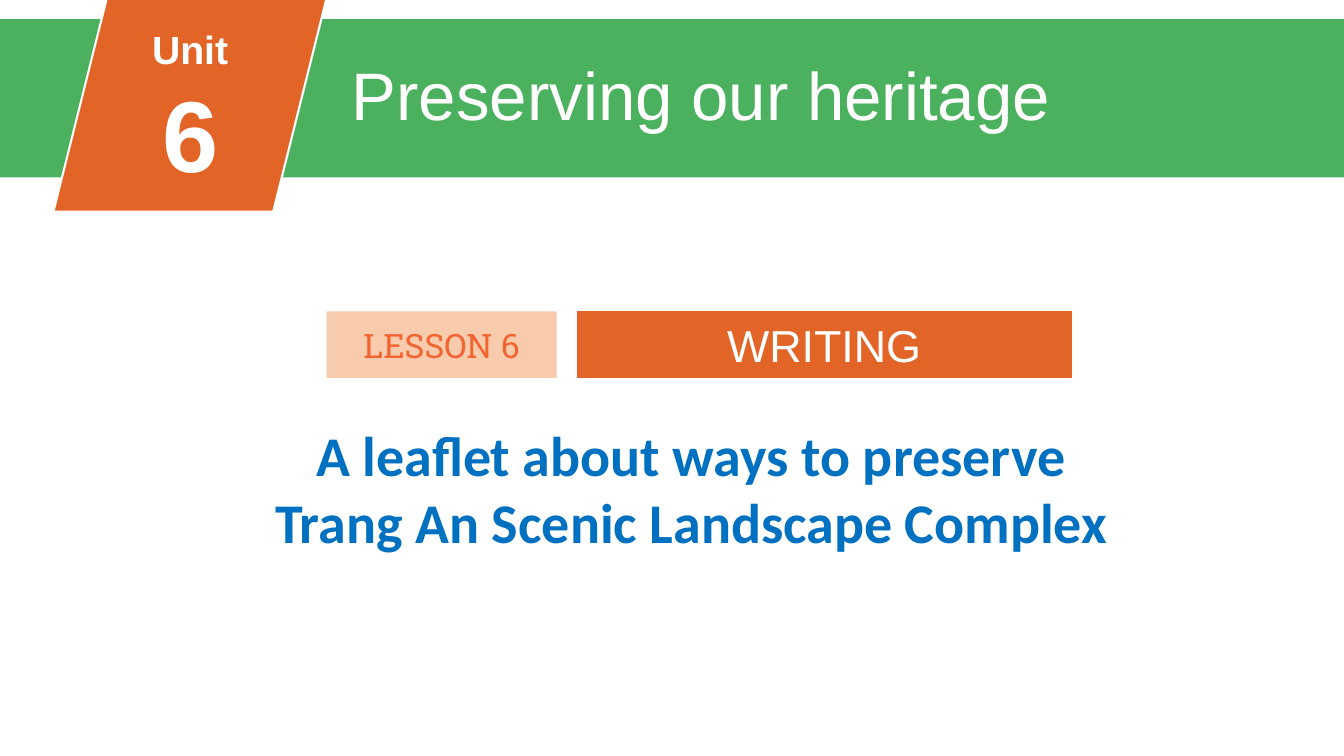
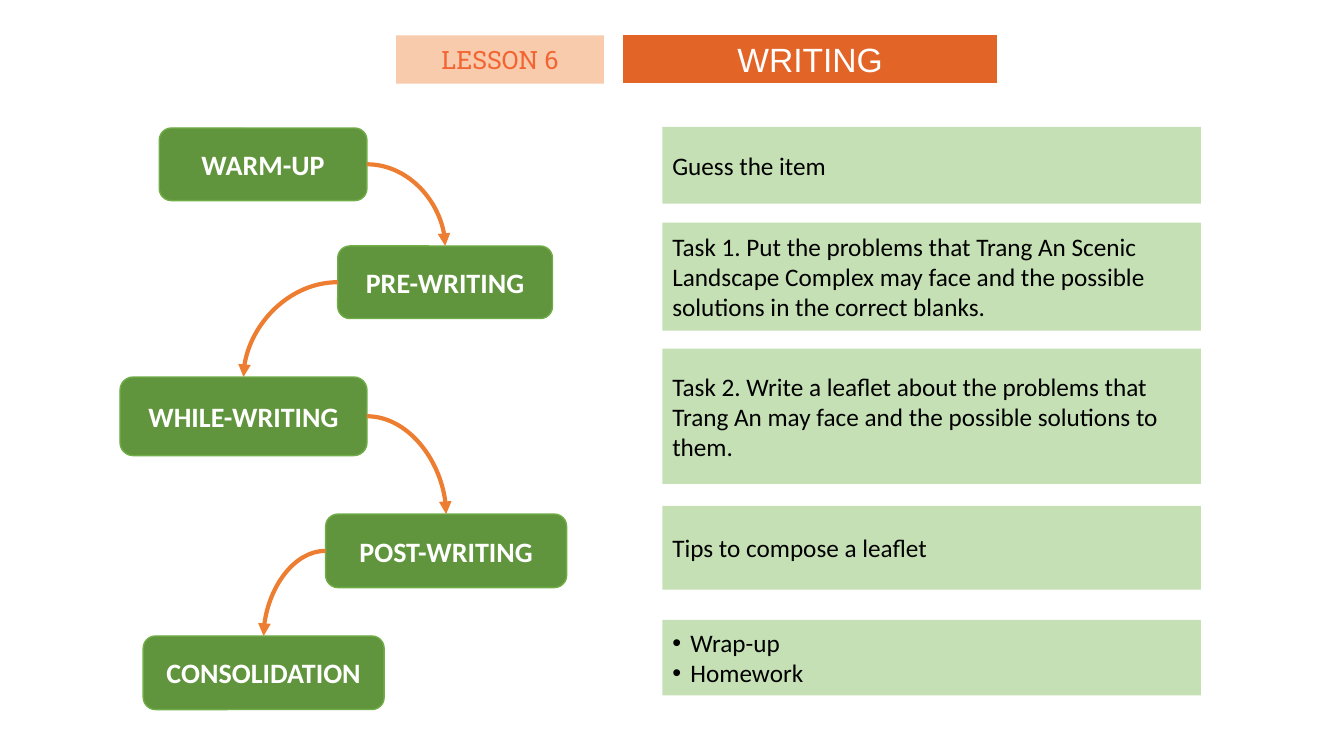
"""Build the two opening slides of a writing lesson."""
from itertools import pairwise

from lxml import etree
from pptx import Presentation
from pptx.dml.color import RGBColor
from pptx.enum.shapes import MSO_CONNECTOR, MSO_SHAPE
from pptx.enum.text import MSO_ANCHOR, PP_ALIGN
from pptx.oxml.ns import qn
from pptx.util import Inches, Pt

RECTANGLE = MSO_SHAPE.RECTANGLE
ROUNDED = MSO_SHAPE.ROUNDED_RECTANGLE
PARALLELOGRAM = MSO_SHAPE.PARALLELOGRAM
CURVE = MSO_CONNECTOR.CURVE
LEFT, CENTER = PP_ALIGN.LEFT, PP_ALIGN.CENTER
TOP, MIDDLE = MSO_ANCHOR.TOP, MSO_ANCHOR.MIDDLE
LEFT_SITE, RIGHT_SITE, TOP_SITE = 1, 3, 0

COLORS = {
    "white": "FFFFFF",
    "black": "000000",
    "band": "4CB15F",
    "orange": "E36427",
    "peach": "F8CBAD",
    "lesson": "F26532",
    "topic": "0070C0",
    "stage": "61953D",
    "stage_line": "70AD47",
    "activity": "C5E0B4",
    "arrow": "ED7D31",
}

STAGES = [
    ("WARM-UP", (1.58, 1.27, 2.06, 0.72)),
    ("PRE-WRITING", (3.35, 2.44, 2.13, 0.72)),
    ("WHILE-WRITING", (1.19, 3.74, 2.45, 0.78)),
    ("POST-WRITING", (3.23, 5.1, 2.39, 0.73)),
    ("CONSOLIDATION", (1.42, 6.31, 2.39, 0.73)),
]

ACTIVITIES = [
    (1.26, 0.76, ["Guess the item"]),
    (2.21, 1.07, ["Task 1. Put the problems that Trang An Scenic Landscape Complex "
                  "may face and the possible solutions in the correct blanks."]),
    (3.46, 1.34, ["Task 2. Write a leaflet about the problems that Trang An "
                  "may face and the possible solutions to them."]),
    (5.02, 0.83, ["Tips to compose a leaflet"]),
    (6.15, 0.75, ["Wrap-up", "Homework"]),
]


def rgb(name):
    """Return the named colour."""
    return RGBColor.from_string(COLORS[name])


def add_bullet(paragraph):
    """Give a paragraph a round bullet with a hanging indent."""
    properties = paragraph._p.get_or_add_pPr()
    properties.set("marL", str(Inches(0.18)))
    properties.set("indent", str(Inches(-0.18)))
    etree.SubElement(properties, qn("a:buFont"), typeface="Arial")
    etree.SubElement(properties, qn("a:buChar"), char="•")


def write(shape, *lines, sizes=(18,), font="Calibri", color="white", bold=False,
          align=CENTER, anchor=MIDDLE, bullets=False):
    """Write one paragraph per line; the last size serves any further lines."""
    frame = shape.text_frame
    frame.word_wrap = True
    frame.vertical_anchor = anchor
    for index, line in enumerate(lines):
        paragraph = frame.add_paragraph() if index else frame.paragraphs[0]
        paragraph.alignment = align
        if bullets:
            add_bullet(paragraph)
        run = paragraph.add_run()
        run.text = line
        run.font.name = font
        run.font.size = Pt(sizes[min(index, len(sizes) - 1)])
        run.font.bold = bold
        run.font.color.rgb = rgb(color)


def add_block(slide, box, fill, kind=RECTANGLE, line=None, line_width=1.5):
    """Add a filled shape without shadow."""
    shape = slide.shapes.add_shape(kind, *map(Inches, box))
    shape.shadow.inherit = False
    shape.fill.solid()
    shape.fill.fore_color.rgb = rgb(fill)
    if line:
        shape.line.color.rgb = rgb(line)
        shape.line.width = Pt(line_width)
    else:
        shape.line.fill.background()
    return shape


def add_text(slide, box, *lines, **text_format):
    """Add a text box."""
    write(slide.shapes.add_textbox(*map(Inches, box)), *lines, **text_format)


def add_lesson_heading(slide, lesson_box, skill_box, lesson_size, skill_size):
    """Add the lesson tag and the skill bar that both slides carry."""
    skill = add_block(slide, skill_box, "orange", line="white")
    write(skill, "WRITING", sizes=(skill_size,), font="Arial")
    lesson = add_block(slide, lesson_box, "peach")
    write(lesson, "LESSON 6", sizes=(lesson_size,), font="Roboto Slab", color="lesson")


def add_curved_arrow(slide, start, end):
    """Join the facing side of one stage to the top of the next."""
    site = RIGHT_SITE if start.left < end.left else LEFT_SITE
    connector = slide.shapes.add_connector(CURVE, 0, 0, 0, 0)
    connector.begin_connect(start, site)
    connector.end_connect(end, TOP_SITE)
    connector.line.color.rgb = rgb("arrow")
    connector.line.width = Pt(3)
    properties = connector._element.spPr
    properties.find(qn("a:prstGeom")).set("prst", "curvedConnector2")
    etree.SubElement(properties.find(qn("a:ln")), qn("a:tailEnd"), type="triangle")
    etree.SubElement(properties, qn("a:effectLst"))


def add_stage(slide, name, box):
    """Add one rounded stage of the lesson and return it."""
    shape = add_block(slide, box, "stage", ROUNDED, "stage_line", 1)
    write(shape, name, sizes=(20,), bold=True)
    return shape


def add_activity(slide, top, height, lines):
    """Add one activity panel, bulleted when it has several lines."""
    shape = add_block(slide, (6.57, top, 5.34, height), "activity")
    write(shape, *lines, color="black", align=LEFT, bullets=len(lines) > 1)


def build_title_slide(slide):
    """Fill the unit title slide."""
    add_lesson_heading(slide, (3.24, 3.09, 2.28, 0.66), (5.71, 3.07, 4.93, 0.69), 24, 32)
    add_text(slide, (2.58, 4.12, 8.55, 1.45),
             "A leaflet about ways to preserve Trang An Scenic Landscape Complex",
             sizes=(40,), color="topic", bold=True, anchor=TOP)
    add_block(slide, (0, 0.19, 13.33, 1.57), "band")
    add_block(slide, (0.53, -0.02, 2.71, 2.12), "orange", PARALLELOGRAM, "white")
    add_text(slide, (3.39, 0.48, 8.89, 0.91), "Preserving our heritage",
             sizes=(48,), font="Arial", align=LEFT, anchor=TOP)
    add_text(slide, (1.19, 0.19, 1.39, 1.78), "Unit", "6",
             sizes=(28, 72), font="Arial", bold=True)


def build_plan_slide(slide):
    """Fill the lesson plan slide."""
    add_lesson_heading(slide, (3.93, 0.35, 2.06, 0.48), (6.17, 0.34, 3.73, 0.49), 18, 24)
    stages = [add_stage(slide, name, box) for name, box in STAGES]
    for start, end in pairwise(stages):
        add_curved_arrow(slide, start, end)
    for top, height, lines in ACTIVITIES:
        add_activity(slide, top, height, lines)


def main():
    """Build and save the presentation."""
    presentation = Presentation()
    presentation.slide_width = Inches(13.33)
    presentation.slide_height = Inches(7.5)
    blank = presentation.slide_layouts[6]
    for build in (build_title_slide, build_plan_slide):
        build(presentation.slides.add_slide(blank))
    presentation.save("out.pptx")


if __name__ == "__main__":
    main()
